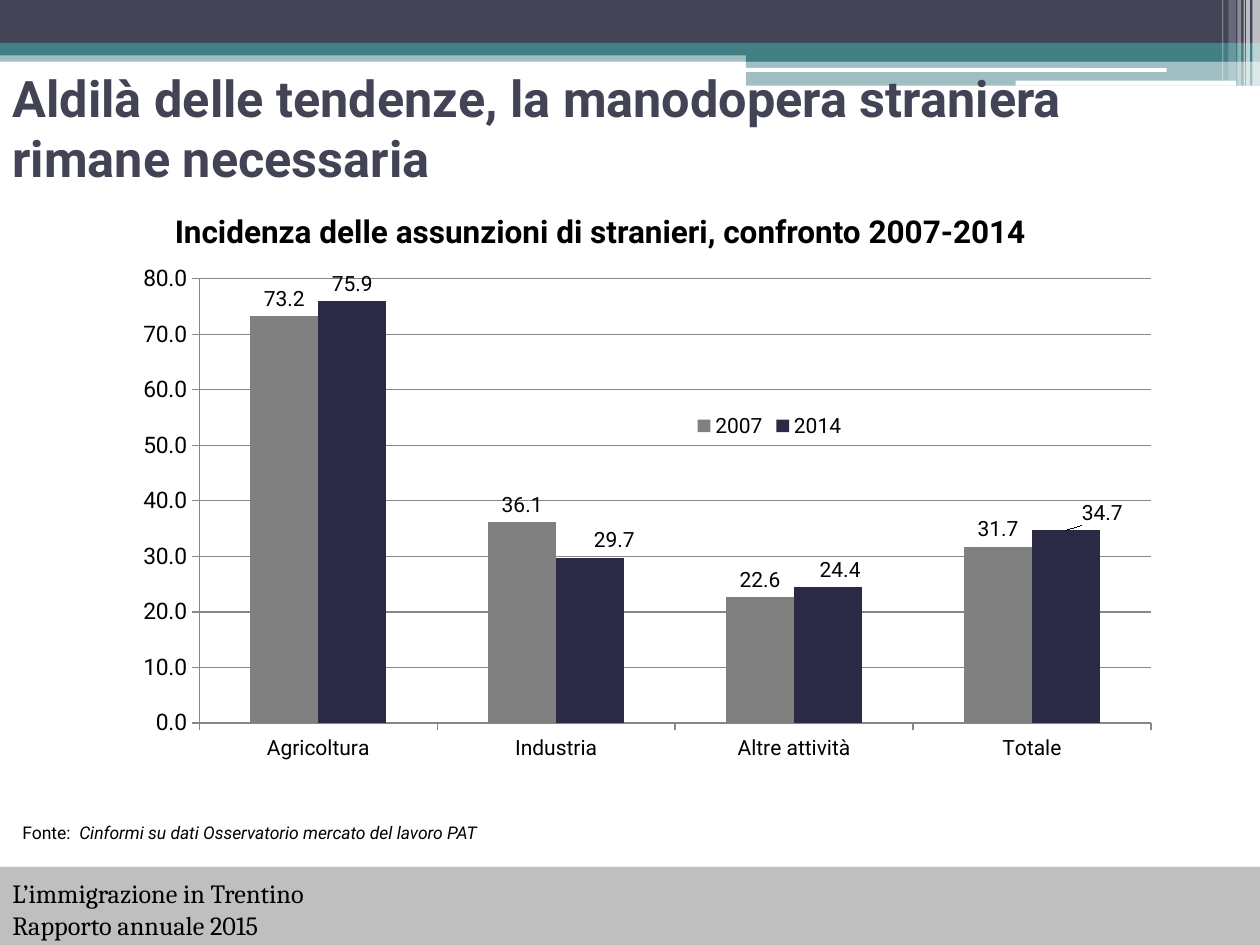
from dataclasses import dataclass

from lxml import etree
from pptx import Presentation
from pptx.chart.data import CategoryChartData
from pptx.dml.color import RGBColor
from pptx.enum.chart import XL_CHART_TYPE, XL_LABEL_POSITION, XL_LEGEND_POSITION, XL_TICK_MARK
from pptx.enum.shapes import MSO_SHAPE
from pptx.enum.text import MSO_ANCHOR, PP_ALIGN
from pptx.oxml import parse_xml
from pptx.oxml.ns import nsdecls, qn
from pptx.util import Inches, Pt

RECT = MSO_SHAPE.RECTANGLE
ROUNDED = MSO_SHAPE.ROUNDED_RECTANGLE
MIDDLE, TOP = MSO_ANCHOR.MIDDLE, MSO_ANCHOR.TOP
LEFT, CENTER = PP_ALIGN.LEFT, PP_ALIGN.CENTER
COLUMNS = XL_CHART_TYPE.COLUMN_CLUSTERED
OUTSIDE_END = XL_LABEL_POSITION.OUTSIDE_END


@dataclass(frozen=True)
class Theme:
    slate: str = "424456"
    teal: str = "438086"
    white: str = "FFFFFF"
    black: str = "000000"
    footer: str = "BFBFBF"
    grid: str = "868686"
    bars: tuple = ("808080", "2A2A45")
    sans: str = "Roboto"
    serif: str = "Cambria"
    title: float = 28.8
    heading: float = 18
    footer_size: float = 15
    value_axis: float = 13
    label: float = 12
    source: float = 10


THEME = Theme()

# left, top, width, height, colour, opacity in percent
BANDS = [
    (0, 0.4, 10, 0.09, THEME.teal, 50),
    (0, 0, 10, 0.34, THEME.slate, 100),
    (0, 0.34, 10, 0.1, THEME.teal, 100),
    (5.92, 0.39, 4.08, 0.1, THEME.teal, 100),
    (5.92, 0.48, 4.08, 0.2, THEME.teal, 50),
]
ROUNDED_LINES = [(5.91, 0.54, 3.35, 0.03), (8.06, 0.64, 1.75, 0.04)]
# left, width, height, opacity in percent
STRIPES = [
    (9.94, 0.06, 0.68, 65),
    (9.89, 0.03, 0.68, 65),
    (9.87, 0.01, 0.68, 60),
    (9.82, 0.03, 0.68, 40),
    (9.75, 0.06, 0.64, 20),
    (9.7, 0.01, 0.64, 30),
]
CATEGORIES = ["Agricoltura", "Industria", "Altre attività", "Totale"]
SERIES = {"2007": (73.2, 36.1, 22.6, 31.7), "2014": (75.9, 29.7, 24.4, 34.7)}
# sideways shift of the 2014 labels, as a share of the chart width
LABEL_SHIFTS = {1: 0.02, 2: 0.01, 3: 0.03}


def rgb(colour):
    return RGBColor.from_string(colour)


def place(shape, left, top, width, height):
    shape.left, shape.top = Inches(left), Inches(top)
    shape.width, shape.height = Inches(width), Inches(height)


def add_block(page, left, top, width, height, colour, opacity=100, kind=RECT):
    block = page.shapes.add_shape(kind, Inches(left), Inches(top), Inches(width), Inches(height))
    block.shadow.inherit = False
    block.line.fill.background()
    block.fill.solid()
    block.fill.fore_color.rgb = rgb(colour)
    if opacity < 100:
        colour_node = block.fill._xPr.find(qn("a:solidFill"))[0]
        etree.SubElement(colour_node, qn("a:alpha"), val=str(opacity * 1000))
    return block


def style_font(font, size, name=THEME.sans, colour=THEME.black, bold=False, italic=False):
    font.size, font.name = Pt(size), name
    font.bold, font.italic = bold, italic
    font.color.rgb = rgb(colour)


def add_span(para, text, **style):
    span = para.add_run()
    span.text = text
    style_font(span.font, **style)


def write(shape, text, anchor=MIDDLE, align=LEFT, **style):
    """Put text in a shape, one paragraph per line, and return the last paragraph."""
    frame = shape.text_frame
    frame.word_wrap = True
    frame.vertical_anchor = anchor
    for index, line in enumerate(text.split("\n")):
        para = frame.add_paragraph() if index else frame.paragraphs[0]
        para.alignment = align
        add_span(para, line, **style)
    return para


def add_text(page, left, top, width, height, text, **style):
    box = page.shapes.add_textbox(Inches(left), Inches(top), Inches(width), Inches(height))
    return write(box, text, **style)


def manual_layout(**values):
    nodes = "".join(f'<c:{key} val="{value}"/>' for key, value in values.items())
    return parse_xml(
        f'<c:layout {nsdecls("c")}><c:manualLayout>{nodes}</c:manualLayout></c:layout>')


def add_header(page):
    for band in BANDS:
        add_block(page, *band)
    for line in ROUNDED_LINES:
        add_block(page, *line, THEME.white, kind=ROUNDED)
    for left, width, height, opacity in STRIPES:
        add_block(page, left, 0, width, height, THEME.white, opacity)


def add_title(page, text):
    title = page.shapes.title
    place(title, 0, 0.7, 9.77, 0.62)
    write(title, text, size=THEME.title, colour=THEME.slate, bold=True)
    page.shapes._spTree.append(title._element)  # in front of the header bands


def style_axis(axis, size):
    style_font(axis.tick_labels.font, size)
    axis.major_tick_mark = XL_TICK_MARK.OUTSIDE
    axis.format.line.color.rgb = rgb(THEME.grid)


def style_series(series, colour):
    series.format.fill.solid()
    series.format.fill.fore_color.rgb = rgb(colour)
    labels = series.data_labels
    labels.show_value = True
    labels.position = OUTSIDE_END
    style_font(labels.font, THEME.label)


def shift_labels(series, shifts):
    for index, shift in shifts.items():
        label = series.points[index].data_label
        label.position = OUTSIDE_END
        style_font(label.font, THEME.label)
    for node in series._element.iter(qn("c:dLbl")):
        index_node = node.find(qn("c:idx"))
        index_node.addnext(manual_layout(x=shifts[int(index_node.get("val"))], y=0))


def add_hiring_chart(page):
    data = CategoryChartData(number_format="#,##0.0")
    data.categories = CATEGORIES
    for name, values in SERIES.items():
        data.add_series(name, values)
    chart = page.shapes.add_chart(
        COLUMNS, Inches(0.39), Inches(2.03), Inches(9.61), Inches(4.22), data).chart
    chart.has_title = False
    style_font(chart.font, THEME.heading, name=THEME.serif)

    style_axis(chart.category_axis, THEME.label)
    value_axis = chart.value_axis
    style_axis(value_axis, THEME.value_axis)
    value_axis.minimum_scale, value_axis.maximum_scale, value_axis.major_unit = 0, 80, 10
    value_axis.major_gridlines.format.line.color.rgb = rgb(THEME.grid)

    plot = chart.plots[0]
    plot.vary_by_categories = False
    plot.gap_width, plot.overlap = 150, 0
    for series, colour in zip(plot.series, THEME.bars):
        style_series(series, colour)
    shift_labels(plot.series[1], LABEL_SHIFTS)

    area = chart._chartSpace.chart.plotArea
    for old in area.findall(qn("c:layout")):
        area.remove(old)
    area.insert(0, manual_layout(layoutTarget="inner", xMode="edge", yMode="edge",
                                 x=0.124, y=0.043, w=0.786, h=0.836))

    chart.has_legend = True
    legend = chart.legend
    legend.position = XL_LEGEND_POSITION.TOP
    legend.include_in_layout = False
    style_font(legend.font, THEME.label)
    legend._element.find(qn("c:legendPos")).addnext(
        manual_layout(xMode="edge", yMode="edge", x=0.53, y=0.28, w=0.13, h=0.08))


def add_footer(page, text):
    footer = add_block(page, 0, 6.88, 10, 0.62, THEME.footer)
    footer.text_frame.margin_top = Inches(0.1)
    write(footer, text, size=THEME.footer_size, name=THEME.serif)


def main():
    deck = Presentation()
    deck.slide_width, deck.slide_height = Inches(10), Inches(7.5)
    page = deck.slides.add_slide(deck.slide_layouts[5])
    add_header(page)
    add_footer(page, "L’immigrazione in Trentino\nRapporto annuale 2015")
    add_title(page, "Aldilà delle tendenze, la manodopera straniera rimane necessaria")
    source = add_text(page, 0.08, 6.33, 5.47, 0.55, "Fonte:  ", size=THEME.source)
    add_span(source, "Cinformi su dati Osservatorio mercato del lavoro PAT",
             size=THEME.source, italic=True)
    add_hiring_chart(page)
    add_text(page, 0.86, 1.63, 7.81, 0.4,
             "Incidenza delle assunzioni di stranieri, confronto 2007-2014",
             anchor=TOP, align=CENTER, size=THEME.heading, bold=True)
    deck.save("out.pptx")


if __name__ == "__main__":
    main()
